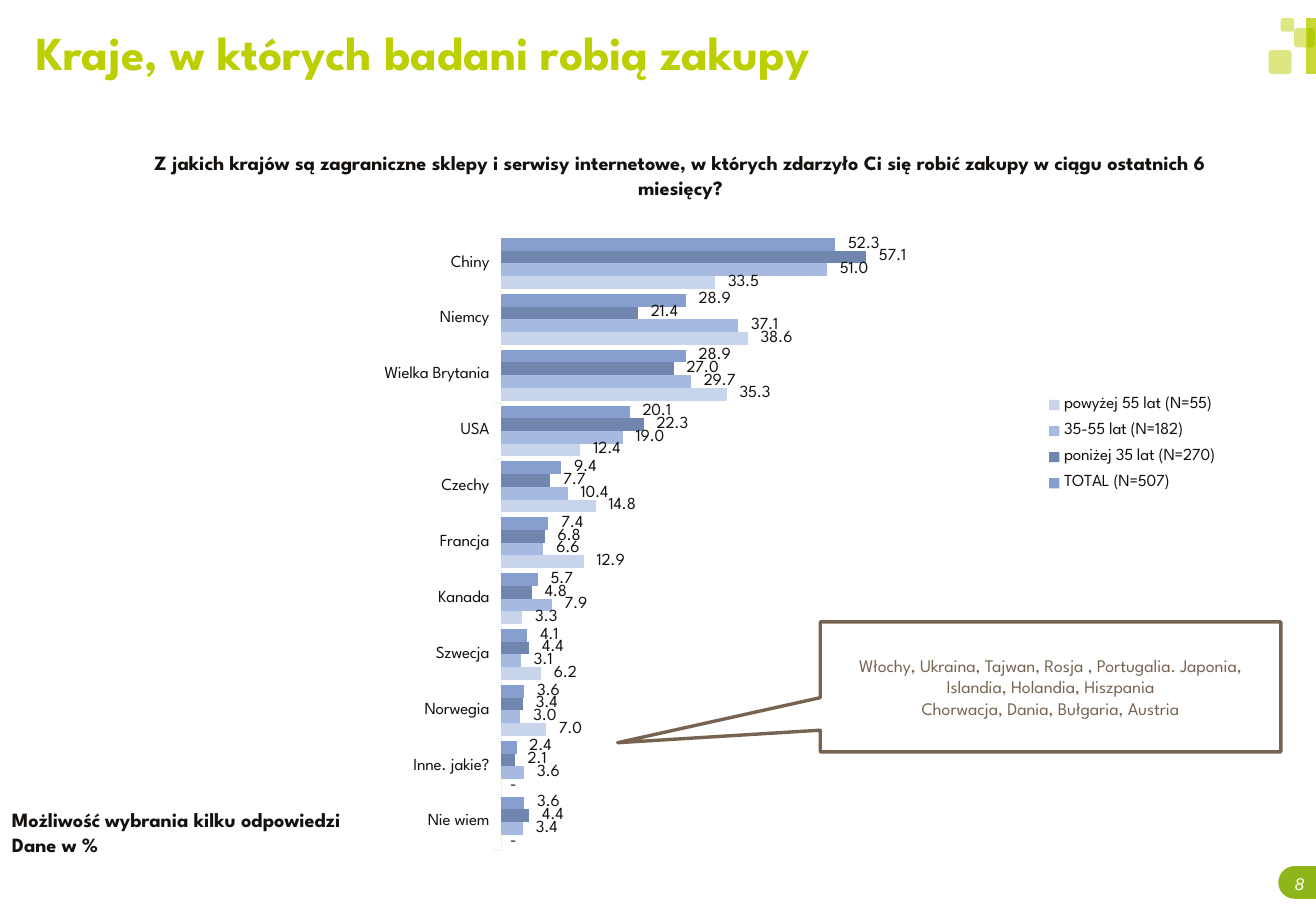
"""Build the slide on the countries where respondents shop."""
import pptx
import pptx.chart.data
import pptx.dml.color
import pptx.enum.chart
import pptx.enum.shapes
import pptx.enum.text
import pptx.oxml
import pptx.oxml.ns
import pptx.util

WIDE, HIGH = 10.83, 7.5
FACE = "League Spartan"
HUES = {"lime": "BCCF03", "leaf": "7CBB26", "page": "8EB519", "ink": "13100D",
        "brown": "766451", "white": "FFFFFF", "axis": "F0F7EC"}

TITLE = ["Kraje, w których badani robią zakupy"]
ASK = ["Z jakich krajów są zagraniczne sklepy i serwisy internetowe, "
       "w których zdarzyło Ci się robić zakupy w ciągu ostatnich 6 miesięcy?"]
NOTE = ["Możliwość wybrania kilku odpowiedzi", "Dane w %"]
OTHER = ["Włochy, Ukraina, Tajwan, Rosja , Portugalia. Japonia, "
         "Islandia, Holandia, Hiszpania",
         "Chorwacja, Dania, Bułgaria, Austria"]

LANDS = ["Chiny", "Niemcy", "Wielka Brytania", "USA", "Czechy", "Francja",
         "Kanada", "Szwecja", "Norwegia", "Inne. jakie?", "Nie wiem"]
GROUPS = [
    ("TOTAL (N=507)", "869FCE",
     [52.3, 28.9, 28.9, 20.1, 9.4, 7.4, 5.7, 4.1, 3.6, 2.4, 3.6]),
    ("poniżej 35 lat (N=270)", "7186AE",
     [57.1, 21.4, 27, 22.3, 7.7, 6.8, 4.8, 4.4, 3.4, 2.1, 4.4]),
    ("35-55 lat (N=182)", "A5B9E1",
     [51, 37.1, 29.7, 19, 10.4, 6.6, 7.9, 3.1, 3, 3.6, 3.4]),
    ("powyżej 55 lat (N=55)", "C8D3EC",
     [33.5, 38.6, 35.3, 12.4, 14.8, 12.9, 3.3, 6.2, 7, 0, 0]),
]
FORMAT = (r'_-* #\ ##0.0\ _z_ł_-;\-* #\ ##0.0\ _z_ł_-;'
          r'_-* "-"??\ _z_ł_-;_-@_-')

# Places are left, top, width, height in percent of the slide
PLACES = {
    "title": (2.77, 1.87, 92.7, 11.33),
    "ask": (7.94, 15.87, 87.53, 6.67),
    "chart": (7.57, 25.33, 86.7, 74.4),
    "note": (0, 88, 70.54, 9.47),
    "other": (62.33, 68.27, 35, 14.27),
    "number": (97.97, 95.87, 1.57, 2.27),
}
DECOR = [
    ("ROUND_2_SAME_RECTANGLE", (97.32, 94.8, 2.49, 4.13), 270, "page", 100),
    ("ROUNDED_RECTANGLE", (96.4, 5.47, 1.75, 2.67), 0, "lime", 50),
    ("ROUNDED_RECTANGLE", (98.34, 3.07, 1.39, 2.13), 0, "lime", 50),
    ("ROUNDED_RECTANGLE", (97.32, 2, 1.02, 1.47), 0, "lime", 50),
    ("ROUND_2_SAME_RECTANGLE", (98.89, 3.73, 1.48, 0.8), 90, "leaf", 100),
    ("RECTANGLE", (99.26, 2, 0.74, 6.13), 0, "lime", 80),
]
PLOT = {"x": 0.352, "y": 0.007, "w": 0.56, "h": 0.907}
KEY = {"x": 0.82, "y": 0.23, "w": 0.17, "h": 0.17}

ALIGN = pptx.enum.text.PP_ALIGN
ANCHOR = pptx.enum.text.MSO_ANCHOR
SHAPE = pptx.enum.shapes.MSO_SHAPE
CHART = pptx.enum.chart


def tint(code):
    return pptx.dml.color.RGBColor.from_string(code)


def area(place):
    left, top, wide, high = place
    return [pptx.util.Inches(share * size / 100) for share, size in
            ((left, WIDE), (top, HIGH), (wide, WIDE), (high, HIGH))]


def style(font, size, hue, **more):
    for name, value in {"name": FACE, "size": pptx.util.Pt(size), **more}.items():
        setattr(font, name, value)
    font.color.rgb = tint(HUES[hue])


def write(shape, lines, size, hue, align=ALIGN.LEFT, frame=None, **more):
    box = shape.text_frame
    settings = {"word_wrap": True, "vertical_anchor": ANCHOR.TOP,
                "auto_size": pptx.enum.text.MSO_AUTO_SIZE.NONE, **(frame or {})}
    for name, value in settings.items():
        setattr(box, name, value)
    box.text = "\n".join(lines)
    for para in box.paragraphs:
        para.alignment = align
        for run in para.runs:
            style(run.font, size, hue, **more)


def draw(slide, kind, place, turn, hue, solid):
    shape = slide.shapes.add_shape(getattr(SHAPE, kind), *area(place))
    shape.shadow.inherit = False
    shape.rotation = turn
    shape.line.fill.background()
    shape.fill.solid()
    shape.fill.fore_color.rgb = tint(HUES[hue])
    if kind == "ROUND_2_SAME_RECTANGLE":
        shape.adjustments[0] = 0.5
    if solid < 100:
        color = shape.fill._xPr.find(".//" + pptx.oxml.ns.qn("a:srgbClr"))
        color.append(pptx.oxml.parse_xml(
            f'<a:alpha {pptx.oxml.ns.nsdecls("a")} val="{solid * 1000}"/>'))


def layout(shares, inner=""):
    modes = "".join(f'<c:{k}Mode val="edge"/>' for k in "xy")
    parts = "".join(f'<c:{k} val="{v}"/>' for k, v in shares.items())
    return pptx.oxml.parse_xml(
        f'<c:layout {pptx.oxml.ns.nsdecls("c")}><c:manualLayout>'
        f'{inner}{modes}{parts}</c:manualLayout></c:layout>')


def chart(slide):
    data = pptx.chart.data.CategoryChartData()
    data.categories = LANDS
    for name, _, values in GROUPS:
        data.add_series(name, values)
    graph = slide.shapes.add_chart(CHART.XL_CHART_TYPE.BAR_CLUSTERED,
                                   *area(PLACES["chart"]), data).chart
    graph.has_title = False
    style(graph.font, 10, "ink")
    plot = graph.plots[0]
    plot.gap_width = 40
    plot.vary_by_categories = False
    for series, (_, code, _) in zip(plot.series, GROUPS):
        series.format.fill.solid()
        series.format.fill.fore_color.rgb = tint(code)
        labels = series.data_labels
        for name, value in {"show_value": True, "number_format": FORMAT,
                            "number_format_is_linked": False,
                            "position": CHART.XL_LABEL_POSITION.OUTSIDE_END}.items():
            setattr(labels, name, value)
        style(labels.font, 10, "ink")

    lands, scale = graph.category_axis, graph.value_axis
    lands.reverse_order = True
    lands.major_tick_mark = CHART.XL_TICK_MARK.OUTSIDE
    lands.format.line.color.rgb = tint(HUES["axis"])
    lands.format.line.width = pptx.util.Pt(0.75)
    style(lands.tick_labels.font, 10, "ink")
    for name, value in {"minimum_scale": 0, "maximum_scale": 100,
                        "has_major_gridlines": False, "visible": False}.items():
        setattr(scale, name, value)

    graph.has_legend = True
    key = graph.legend
    key.position = CHART.XL_LEGEND_POSITION.RIGHT
    key.include_in_layout = False
    style(key.font, 10, "ink")
    field = graph._chartSpace.chart.plotArea
    for node, spot, new in ((field, 0, layout(PLOT, '<c:layoutTarget val="inner"/>')),
                            (key._element, 1, layout(KEY))):
        for old in node.findall(pptx.oxml.ns.qn("c:layout")):
            node.remove(old)
        node.insert(spot, new)


def main():
    deck = pptx.Presentation()
    deck.slide_width = pptx.util.Inches(WIDE)
    deck.slide_height = pptx.util.Inches(HIGH)
    slide = deck.slides.add_slide(deck.slide_layouts[5])
    for item in DECOR:
        draw(slide, *item)

    title = slide.shapes.title
    for name, value in zip(("left", "top", "width", "height"), area(PLACES["title"])):
        setattr(title, name, value)
    write(title, TITLE, 28, "lime", frame={"margin_left": 0, "margin_right": 0}, bold=True)
    chart(slide)

    flush = {f"margin_{side}": 0 for side in ("left", "top", "right", "bottom")}
    for place, lines, size, hue, align, frame, more in (
            ("ask", ASK, 12, "ink", ALIGN.CENTER, {}, {"bold": True}),
            ("note", NOTE, 12, "ink", ALIGN.LEFT, {}, {"bold": True}),
            ("number", ["8"], 10, "white", ALIGN.CENTER, {**flush, "word_wrap": False},
             {"name": "Arial", "italic": True})):
        box = slide.shapes.add_textbox(*area(PLACES[place]))
        write(box, lines, size, hue, align, frame, **more)

    other = slide.shapes.add_shape(SHAPE.RECTANGULAR_CALLOUT, *area(PLACES["other"]))
    other.shadow.inherit = False
    other.adjustments[0], other.adjustments[1] = -0.94, 0.43
    other.fill.background()
    other.line.color.rgb = tint(HUES["brown"])
    other.line.width = pptx.util.Pt(2)
    write(other, OTHER, 10.5, "brown", ALIGN.CENTER, {"vertical_anchor": ANCHOR.MIDDLE})
    deck.save("out.pptx")


if __name__ == "__main__":
    main()
